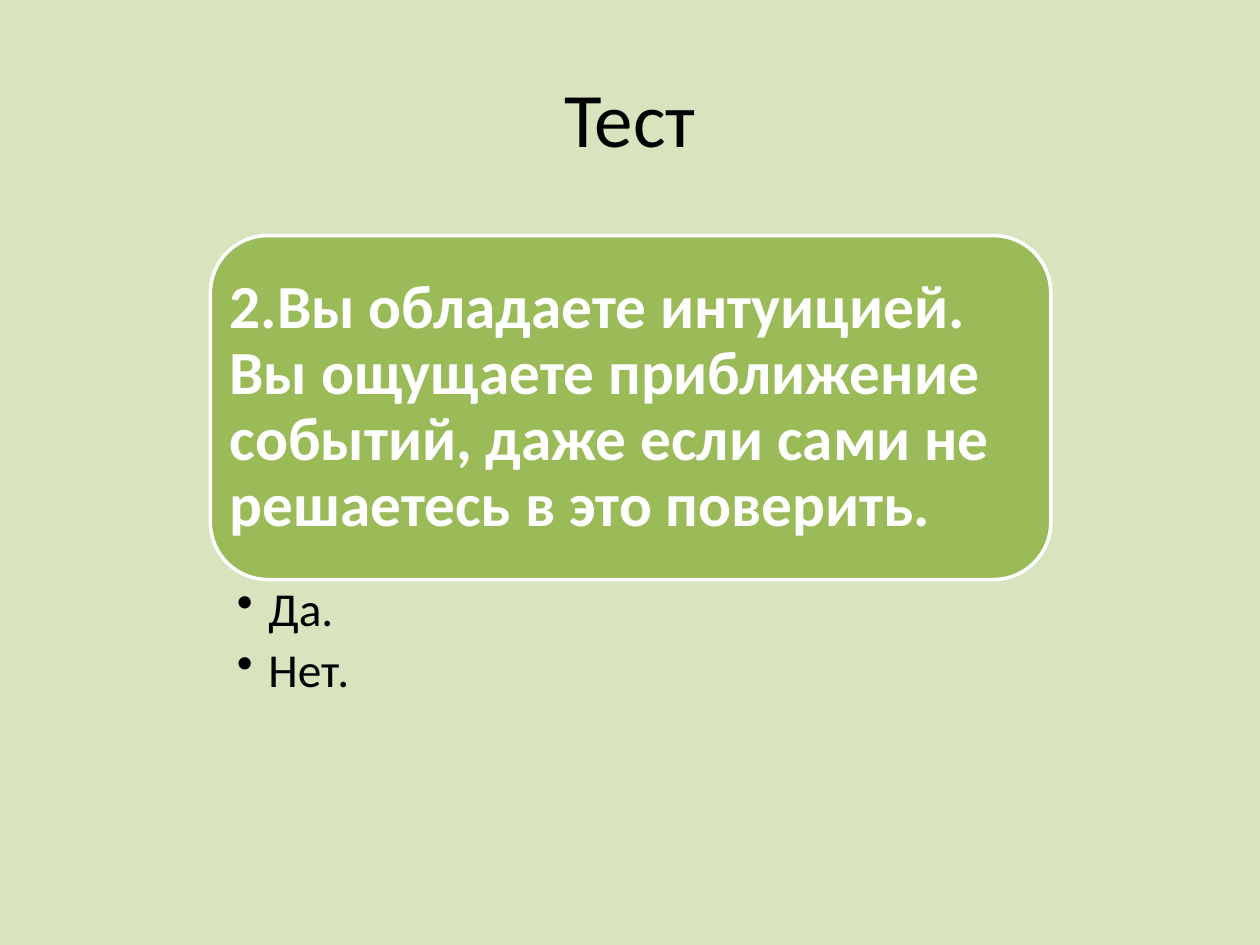
from lxml import etree
from pptx import Presentation
from pptx.dml.color import RGBColor
from pptx.enum import shapes, text
from pptx.oxml import ns
from pptx.util import Inches, Pt

FONT = "Calibri"
LEFT, WIDTH = 1.67, 6.67
QUESTION_TOP, QUESTION_HEIGHT = 1.87, 2.73
QUESTION = ("2.Вы обладаете интуицией. Вы ощущаете приближение событий, "
            "даже если сами не решаетесь в это поверить.")
ANSWERS = ["Да.", "Нет."]


def rgb(color):
    return RGBColor.from_string(color)


def format_paragraph(p, size, color, align, bold=False):
    p.alignment = align
    for r in p.runs:
        r.font.name = FONT
        r.font.size = Pt(size)
        r.font.bold = bold
        r.font.color.rgb = rgb(color)


def set_frame(tf, anchor, left, top, right, bottom):
    tf.word_wrap = True
    tf.auto_size = text.MSO_AUTO_SIZE.NONE
    tf.vertical_anchor = anchor
    tf.margin_left, tf.margin_top = Inches(left), Inches(top)
    tf.margin_right, tf.margin_bottom = Inches(right), Inches(bottom)


def add_bullet(p, indent):
    pPr = p._p.get_or_add_pPr()
    pPr.set("marL", str(Inches(indent)))
    pPr.set("indent", str(-Inches(indent)))
    etree.SubElement(pPr, ns.qn("a:buChar")).set("char", "•")


def set_title(s, title):
    sp = s.shapes.title
    sp.left, sp.top = Inches(0.5), Inches(0.3)
    sp.width, sp.height = Inches(9), Inches(1.25)
    tf = sp.text_frame
    tf.text = title
    set_frame(tf, text.MSO_ANCHOR.MIDDLE, 0.1, 0.05, 0.1, 0.05)
    format_paragraph(tf.paragraphs[0], 44, "000000", text.PP_ALIGN.CENTER)


def add_question(s, question):
    sp = s.shapes.add_shape(
        shapes.MSO_SHAPE.ROUNDED_RECTANGLE, Inches(LEFT), Inches(QUESTION_TOP),
        Inches(WIDTH), Inches(QUESTION_HEIGHT))
    sp.shadow.inherit = False
    sp.fill.solid()
    sp.fill.fore_color.rgb = rgb("9BBB59")
    sp.line.color.rgb = rgb("FFFFFF")
    sp.line.width = Pt(2)
    tf = sp.text_frame
    tf.text = question
    # the rounded preset already insets its text area
    set_frame(tf, text.MSO_ANCHOR.MIDDLE, 0.02, 0.02, 0.02, 0.02)
    p = tf.paragraphs[0]
    p.line_spacing = 0.9
    format_paragraph(p, 35, "FFFFFF", text.PP_ALIGN.LEFT, bold=True)


def add_answers(s, answers):
    sp = s.shapes.add_textbox(
        Inches(LEFT), Inches(QUESTION_TOP + QUESTION_HEIGHT),
        Inches(WIDTH), Inches(1.03))
    tf = sp.text_frame
    tf.text = "\n".join(answers)
    set_frame(tf, text.MSO_ANCHOR.TOP, 0.21, 0.05, 0.27, 0.05)
    for p in tf.paragraphs:
        p.level = 1
        p.line_spacing = 0.9
        p.space_after = Pt(5.4)
        add_bullet(p, 0.25)
        format_paragraph(p, 27, "000000", text.PP_ALIGN.LEFT)


def main():
    prs = Presentation()
    prs.slide_width, prs.slide_height = Inches(10), Inches(7.5)
    s = prs.slides.add_slide(prs.slide_layouts[5])
    s.background.fill.solid()
    s.background.fill.fore_color.rgb = rgb("D7E4BD")
    set_title(s, "Тест")
    add_question(s, QUESTION)
    add_answers(s, ANSWERS)
    prs.save("out.pptx")


if __name__ == "__main__":
    main()
